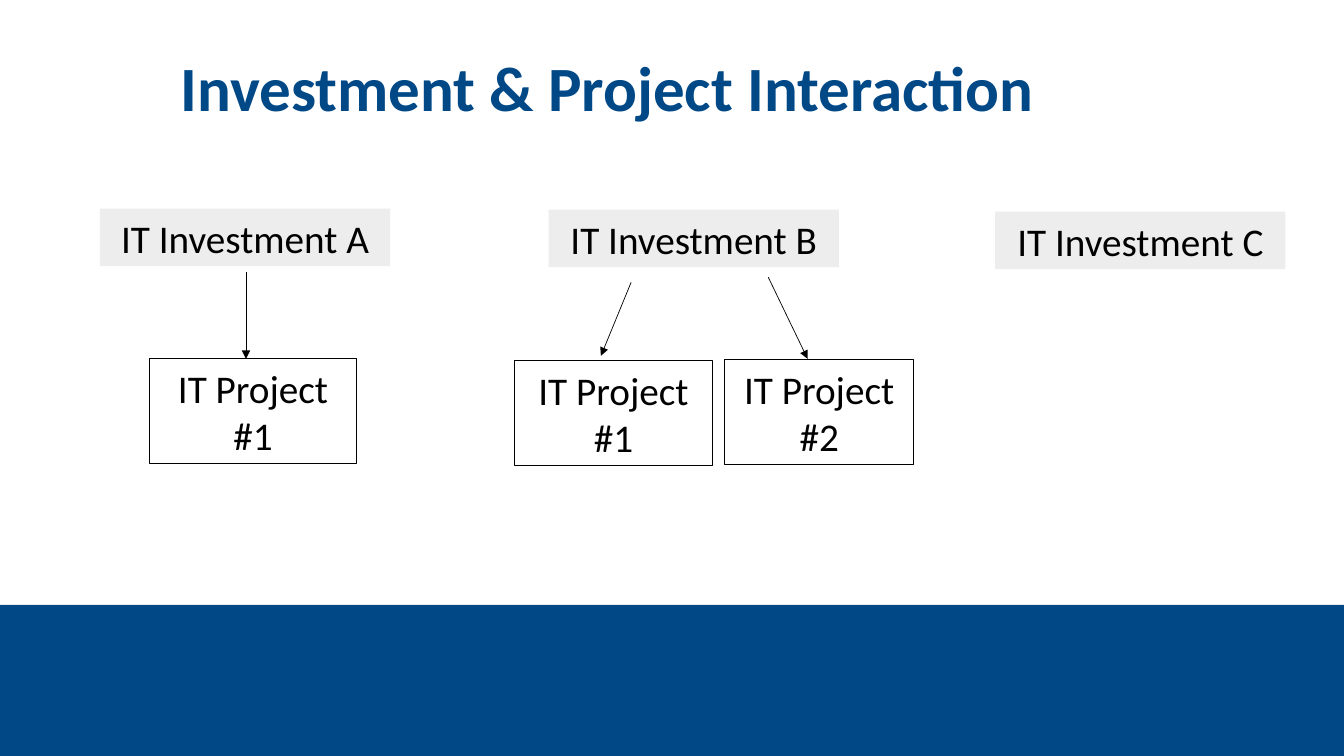
from lxml import etree
from pptx import Presentation
from pptx.dml.color import RGBColor
from pptx.enum.shapes import MSO_CONNECTOR, MSO_SHAPE
from pptx.enum.text import MSO_ANCHOR, PP_ALIGN
from pptx.oxml.ns import qn
from pptx.util import Inches, Pt

RECTANGLE = MSO_SHAPE.RECTANGLE
STRAIGHT = MSO_CONNECTOR.STRAIGHT
CENTER = PP_ALIGN.CENTER
MIDDLE = MSO_ANCHOR.MIDDLE
BOTTOM = MSO_ANCHOR.BOTTOM

FONT = "Calibri"
TITLE_LAYOUT = 5
COLORS = {"blue": "004986", "gray": "EDEDED", "black": "000000"}

INVESTMENTS = [
    ("IT Investment A", 0.99, 2.07),
    ("IT Investment B", 5.44, 2.08),
    ("IT Investment C", 9.87, 2.1),
]
PROJECTS = [
    ("#1", 1.48, 3.56, 2.06),
    ("#1", 5.1, 3.58, 1.97),
    ("#2", 7.19, 3.57, 1.87),
]
ARROWS = [
    (2.44, 2.7, 2.44, 3.56),
    (6.26, 2.8, 5.96, 3.53),
    (7.62, 2.75, 8.01, 3.56),
]


def color(name):
    return RGBColor.from_string(COLORS[name])


def style_paragraph(paragraph, size, color_name, bold=False):
    paragraph.alignment = CENTER
    paragraph.font.name = FONT
    paragraph.font.size = Pt(size)
    paragraph.font.bold = bold
    paragraph.font.color.rgb = color(color_name)


def add_box(slide, left, top, width, height, fill=None, line=None, lines=()):
    """Add a rectangle with one centred paragraph for each of the lines."""
    shape = slide.shapes.add_shape(
        RECTANGLE, Inches(left), Inches(top), Inches(width), Inches(height))
    shape.shadow.inherit = False
    if fill:
        shape.fill.solid()
        shape.fill.fore_color.rgb = color(fill)
    else:
        shape.fill.background()
    if line:
        shape.line.color.rgb = color(line)
        shape.line.width = Pt(0.75)
    else:
        shape.line.fill.background()
    if lines:
        frame = shape.text_frame
        frame.word_wrap = True
        frame.vertical_anchor = MIDDLE
        frame.text = "\n".join(lines)
        for paragraph in frame.paragraphs:
            style_paragraph(paragraph, 28, "black")


def add_arrow(slide, *ends):
    connector = slide.shapes.add_connector(
        STRAIGHT, *(Inches(value) for value in ends))
    connector.line.color.rgb = color("black")
    connector.line.width = Pt(0.5)
    etree.SubElement(connector.line._get_or_add_ln(), qn("a:tailEnd"), type="triangle")
    etree.SubElement(connector._element.spPr, qn("a:effectLst"))


def set_title(slide, text):
    title = slide.shapes.title
    title.left, title.top = Inches(1.02), Inches(0.48)
    title.width, title.height = Inches(10), Inches(0.81)
    frame = title.text_frame
    frame.text = text
    frame.vertical_anchor = BOTTOM
    paragraph = frame.paragraphs[0]
    paragraph.line_spacing = 0.9
    style_paragraph(paragraph, 45, "blue", bold=True)


def main():
    presentation = Presentation()
    presentation.slide_width = Inches(13.33)
    presentation.slide_height = Inches(7.5)
    slide = presentation.slides.add_slide(presentation.slide_layouts[TITLE_LAYOUT])

    set_title(slide, "Investment & Project Interaction")
    add_box(slide, 0, 6, 13.33, 1.5, fill="blue")
    for name, left, top in INVESTMENTS:
        add_box(slide, left, top, 2.88, 0.57, fill="gray", lines=[name])
    for number, left, top, width in PROJECTS:
        add_box(slide, left, top, width, 1.04, line="black",
                lines=["IT Project", number])
    for ends in ARROWS:
        add_arrow(slide, *ends)

    presentation.save("out.pptx")


if __name__ == "__main__":
    main()
